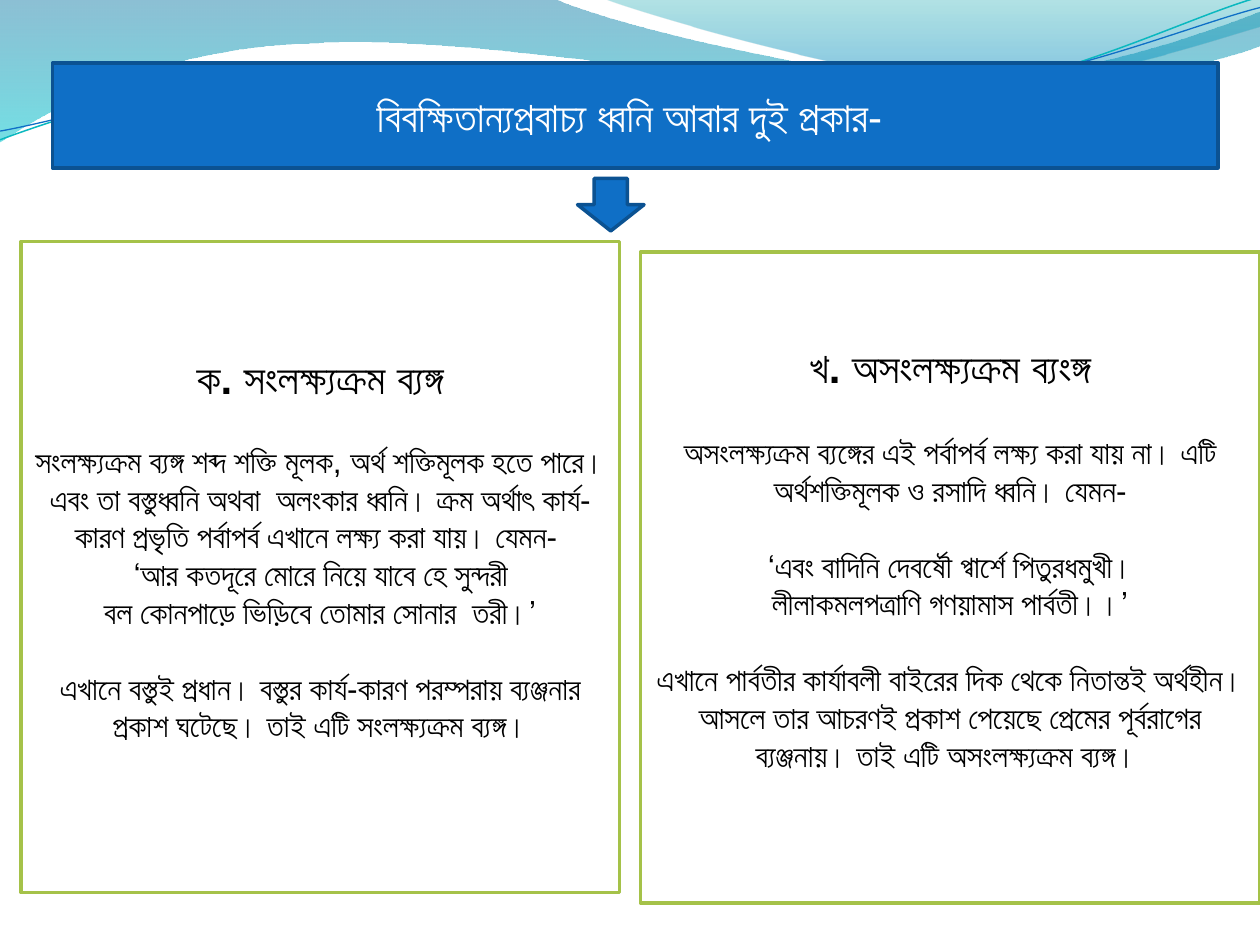
from lxml.etree import Element, SubElement
from pptx import Presentation
from pptx.dml.color import RGBColor
from pptx.enum.shapes import MSO_SHAPE
from pptx.enum.text import MSO_ANCHOR, PP_ALIGN
from pptx.oxml.ns import qn
from pptx.util import Pt

BLUE, NAVY, GREEN = "0F6FC6", "0B5292", "A5C249"
NUKTA = chr(0x9BC)
LETTERS = [(chr(0x9DF), chr(0x9AF) + NUKTA), (chr(0x9DC), chr(0x9A1) + NUKTA)]


def rgb(value):
    return RGBColor.from_string(value)


def switch_dotted(text):
    """Switch dotted letters between the one-character and two-character spelling."""
    for single, pair in LETTERS:
        text = text.replace(single, pair) if single in text else text.replace(pair, single)
    return text


prs = Presentation()
prs.slide_width, prs.slide_height = Pt(720), Pt(540)
s = prs.slides.add_slide(prs.slide_layouts[5])

# Waves across the top: start, segments (line: 2 numbers, curve: 6), gradient, line
waves = [
    ((0, 0),
     [(316.8, -0.7), (342.7, 12.2, 478, 45.4, 545.8, 45.4),
      (614.2, 45.4, 689.8, 18.7, 720, 6.5), (720.7, 25.9),
      (707.8, 31.7, 626.4, 54.7, 537.1, 54),
      (447.8, 54, 275, 20.2, 185, 24.5),
      (92.9, 25.9, 33.1, 59.8, -0.7, 81.4)],
     [(0, "0074A1", 45), (1, "00C6CF", 55)], None),
    ((344.9, -0.7),
     [(366.5, 7.9, 491, 44.6, 553.7, 46.8),
      (616.3, 49.7, 691.9, 23, 720, 15.1), (720, 0)],
     [(0, "00A1A9", 30), (0.8, "008BBF", 45)], None),
    ((0, 79.9),
     [(34.6, 67, 113.8, 41, 199.4, 37.4),
      (284.4, 33.8, 427, 64.1, 513.4, 57.6),
      (599.8, 51.1, 675.4, 10.8, 718.6, -1.4)],
     None, ("0AB8BF", 0.85)),
    ((0, 74.9),
     [(33.8, 69.1, 118.1, 43.9, 203.8, 40.3),
      (290.2, 36.7, 429.8, 60.5, 516.2, 54),
      (601.9, 48.2, 677.5, 15.1, 720, 4.3)],
     None, (BLUE, 0.75)),
]
for start, segments, stops, line in waves:
    fb = s.shapes.build_freeform(Pt(start[0]), Pt(start[1]))
    fb.add_line_segments([(Pt(seg[-2]), Pt(seg[-1])) for seg in segments],
                         close=stops is not None)
    sp = fb.convert_to_shape()
    for el, seg in zip(list(sp._element.iter(qn("a:lnTo"))), segments):
        if len(seg) == 6:
            curve = Element(qn("a:cubicBezTo"))
            for x, y in (seg[:2], seg[2:4]):
                SubElement(curve, qn("a:pt"), x=str(Pt(x) - sp.left), y=str(Pt(y) - sp.top))
            curve.append(el[0])
            el.getparent().replace(el, curve)
    sp.shadow.inherit = False
    if stops:
        sp.line.fill.background()
        sp.fill.gradient()
        sp.fill.gradient_angle = 270
        for stop, (position, color, alpha) in zip(sp.fill.gradient_stops, stops):
            stop.position = position
            stop.color.rgb = rgb(color)
        for el, (_, _, alpha) in zip(sp.fill._xPr.iter(qn("a:srgbClr")), stops):
            SubElement(el, qn("a:alpha"), val=str(alpha * 1000))
    else:
        sp.fill.background()
        sp.line.color.rgb, sp.line.width = rgb(line[0]), Pt(line[1])

# Boxes: paragraphs are (text, size, bold, space before)
title = s.shapes.title
s.shapes._spTree.append(title._element)  # in front of the waves
arrow = s.shapes.add_shape(MSO_SHAPE.DOWN_ARROW, 0, 0, 0, 0)
left, right = (s.shapes.add_shape(MSO_SHAPE.RECTANGLE, 0, 0, 0, 0) for _ in range(2))

boxes = [
    (title, (30, 36, 666, 60), BLUE, NAVY, "FFFFFF", 3.6, [
        ("বিবক্ষিতান্যপ্রবাচ্য ধ্বনি আবার দুই প্রকার- ", 24, False, 0)]),
    (arrow, (330, 102, 38, 30), BLUE, NAVY, "FFFFFF", 3.6, []),
    (left, (12, 138, 342, 372), "FFFFFF", GREEN, "000000", 24.6, [
        ("ক. সংলক্ষ্যক্রম ব্যঙ্গ", 24, True, 0),
        ("সংলক্ষ্যক্রম ব্যঙ্গ শব্দ শক্তি মূলক, অর্থ শক্তিমূলক হতে পারে। এবং তা বস্তুধ্বনি "
         "অথবা  অলংকার ধ্বনি। ক্রম অর্থাৎ কার্য-কারণ প্রভৃতি পর্বাপর্ব এখানে লক্ষ্য করা যায়। "
         "যেমন- ", 18, False, 22),
        ("‘আর কতদূরে মোরে নিয়ে যাবে হে সুন্দরী", 18, False, 0),
        ("বল কোনপাড়ে ভিড়িবে তোমার সোনার  তরী।’", 18, False, 0),
        ("এখানে বস্তুই প্রধান। বস্তুর কার্য-কারণ পরম্পরায় ব্যঞ্জনার প্রকাশ ঘটেছে। "
         "তাই এটি সংলক্ষ্যক্রম ব্যঙ্গ।", 18, False, 21.6)]),
    (right, (366, 144, 354, 372), "FFFFFF", GREEN, "000000", 26.6, [
        ("খ. অসংলক্ষ্যক্রম ব্যংঙ্গ", 24, True, 0),
        ("অসংলক্ষ্যক্রম ব্যঙ্গের এই পর্বাপর্ব লক্ষ্য করা যায় না। এটি অর্থশক্তিমূলক ও "
         "রসাদি ধ্বনি। যেমন-", 18, False, 23.6),
        ("‘এবং বাদিনি দেবর্ষৌ প্বার্শে পিতুরধমুখী।", 18, False, 21.6),
        ("লীলাকমলপত্রাণি গণয়ামাস পার্বতী।।’", 18, False, 0),
        ("এখানে পার্বতীর কার্যাবলী বাইরের দিক থেকে নিতান্তই অর্থহীন। আসলে তার আচরণই "
         "প্রকাশ পেয়েছে প্রেমের পূর্বরাগের ব্যঞ্জনায়। তাই এটি অসংলক্ষ্যক্রম ব্যঙ্গ। ",
         18, False, 21.6)]),
]
for sp, bounds, fill, line, color, bottom, paragraphs in boxes:
    for name, value in zip(("left", "top", "width", "height"), bounds):
        setattr(sp, name, Pt(value))
    sp.shadow.inherit = False
    sp.fill.solid()
    sp.fill.fore_color.rgb = rgb(fill)
    sp.line.color.rgb, sp.line.width = rgb(line), Pt(2)
    tf = sp.text_frame
    frame_format = {"word_wrap": True, "vertical_anchor": MSO_ANCHOR.MIDDLE,
                    "margin_bottom": Pt(bottom)}
    for name, value in frame_format.items():
        setattr(tf, name, value)
    for i, (text, size, bold, before) in enumerate(paragraphs):
        p = tf.add_paragraph() if i else tf.paragraphs[0]
        p.alignment, p.space_before = PP_ALIGN.CENTER, Pt(before)
        r = p.add_run()
        r.text = switch_dotted(text)
        for name, value in {"name": "Arial", "size": Pt(size), "bold": bold}.items():
            setattr(r.font, name, value)
        r.font.color.rgb = rgb(color)

prs.save("out.pptx")
